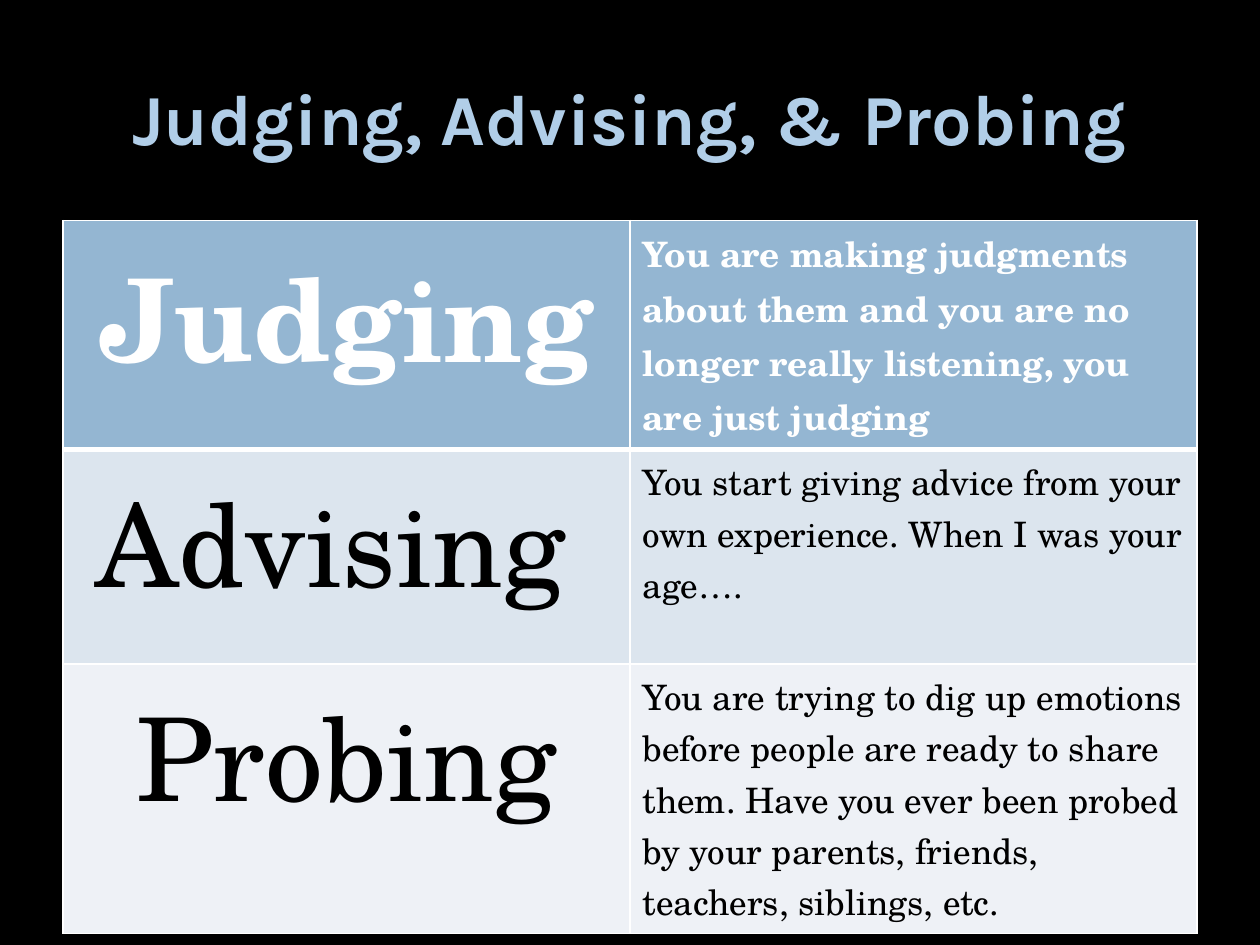
from dataclasses import dataclass

from lxml.etree import SubElement
from pptx import Presentation
from pptx.dml.color import RGBColor as Color
from pptx.enum.text import MSO_ANCHOR as Anchor, PP_ALIGN as Align
from pptx.oxml.ns import qn
from pptx.util import Inches, Pt

TITLE = "Judging, Advising, & Probing"
RESPONSES = [
    ("Judging", "You are making judgments about them and you are no longer really "
                "listening, you are just judging"),
    ("Advising ", "You start giving advice from your own experience. "
                  "When I was your age…."),
    ("Probing", "You are trying to dig up emotions before people are ready to share "
                "them. Have you ever been probed by your parents, friends, teachers, "
                "siblings, etc."),
]
ROW_HEIGHTS = [1.82, 1.7, 2.14]
COLUMN_WIDTH = 4.5


@dataclass(frozen=True)
class Theme:
    background: str = "000000"
    title: str = "B1CEE8"
    header_text: str = "FFFFFF"
    body_text: str = "000000"
    border: str = "FFFFFF"
    row_fills: tuple = ("94B6D2", "DCE5EE", "EEF1F6")
    title_font: str = "Karla"
    table_font: str = "TeX Gyre Schola"
    title_size: int = 41
    name_size: int = 66
    description_size: int = 20


THEME = Theme()


def add_text(frame, text, font, size, color, bold, align):
    paragraph = frame.paragraphs[0]
    paragraph.alignment = align
    run = paragraph.add_run()
    run.text = text
    run.font.name = font
    run.font.size = Pt(size)
    run.font.bold = bold
    run.font.color.rgb = Color.from_string(color)


def add_borders(cell, widths):
    properties = cell._tc.get_or_add_tcPr()
    for side, width in widths.items():
        line = SubElement(properties, qn(f"a:ln{side}"), w=str(Pt(width)))
        fill = SubElement(line, qn("a:solidFill"))
        SubElement(fill, qn("a:srgbClr"), val=THEME.border)


def add_title(slide):
    box = slide.shapes.add_textbox(Inches(0.5), Inches(0.3), Inches(9), Inches(1.25))
    frame = box.text_frame
    frame.word_wrap = True
    frame.vertical_anchor = Anchor.MIDDLE
    add_text(frame, TITLE, THEME.title_font, THEME.title_size, THEME.title, True,
             Align.CENTER)


def add_response_table(slide):
    table = slide.shapes.add_table(
        len(RESPONSES), 2, Inches(0.5), Inches(1.75),
        Inches(2 * COLUMN_WIDTH), Inches(sum(ROW_HEIGHTS))).table
    table.horz_banding = False
    for column in table.columns:
        column.width = Inches(COLUMN_WIDTH)
    styles = [(THEME.name_size, Align.CENTER), (THEME.description_size, Align.LEFT)]
    for index, texts in enumerate(RESPONSES):
        table.rows[index].height = Inches(ROW_HEIGHTS[index])
        header = index == 0
        color = THEME.header_text if header else THEME.body_text
        borders = {"L": 1, "R": 1, "T": 3 if index == 1 else 1, "B": 3 if header else 1}
        for column, (text, (size, align)) in enumerate(zip(texts, styles)):
            cell = table.cell(index, column)
            add_borders(cell, borders)
            cell.fill.solid()
            cell.fill.fore_color.rgb = Color.from_string(THEME.row_fills[index])
            add_text(cell.text_frame, text, THEME.table_font, size, color, header, align)


def main():
    presentation = Presentation()
    presentation.slide_width = Inches(10)
    presentation.slide_height = Inches(7.5)
    slide = presentation.slides.add_slide(presentation.slide_layouts[6])
    slide.background.fill.solid()
    slide.background.fill.fore_color.rgb = Color.from_string(THEME.background)
    add_title(slide)
    add_response_table(slide)
    presentation.save("out.pptx")


if __name__ == "__main__":
    main()
